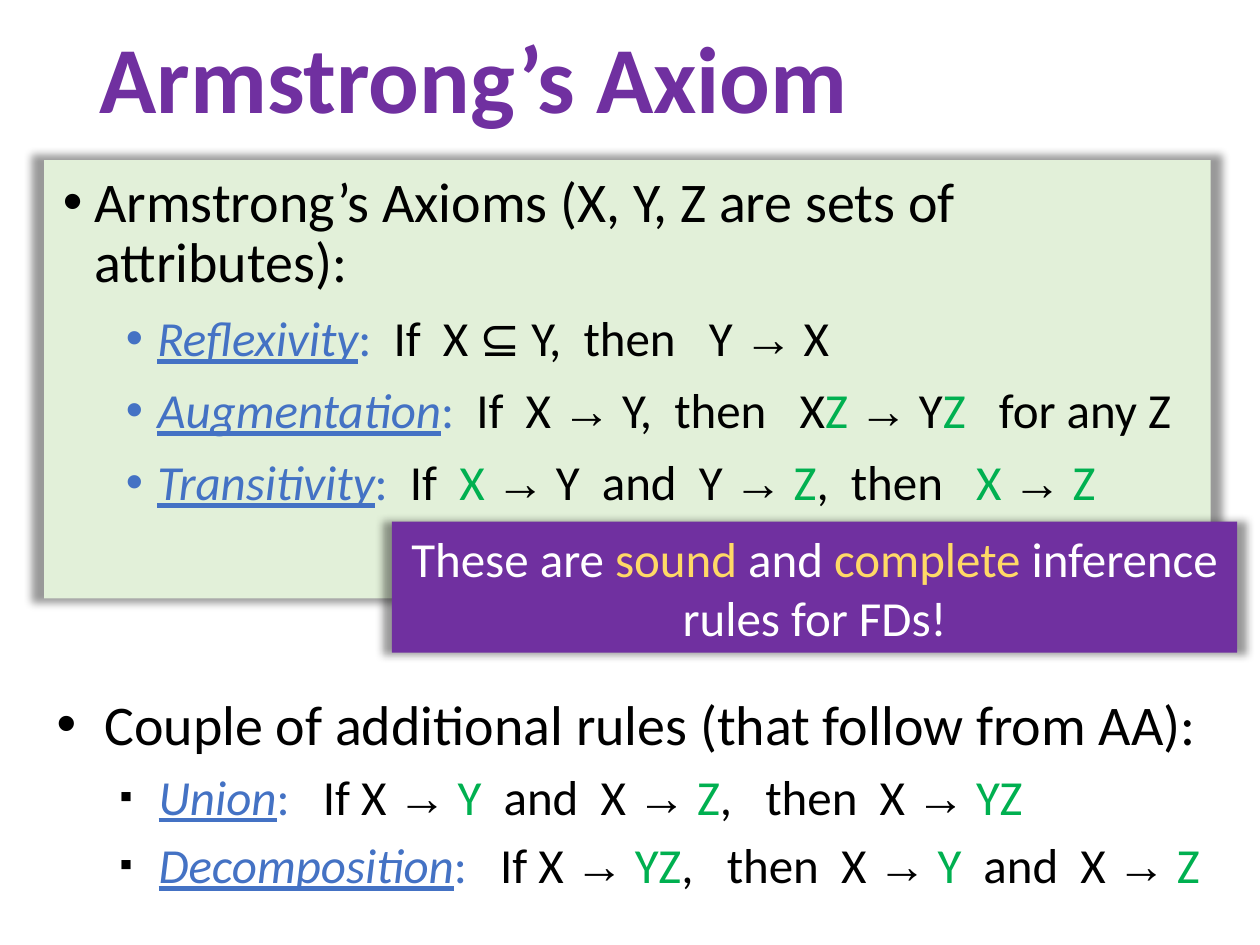
from itertools import groupby

from lxml.etree import SubElement
from pptx import Presentation
from pptx.dml.color import RGBColor
from pptx.enum.shapes import MSO_SHAPE as Shape
from pptx.enum.text import MSO_ANCHOR as Anchor, PP_ALIGN as Align
from pptx.oxml.ns import qn
from pptx.util import Inches, Pt

BLACK = RGBColor(0x00, 0x00, 0x00)
WHITE = RGBColor(0xFF, 0xFF, 0xFF)
PURPLE = RGBColor(0x70, 0x30, 0xA0)
BLUE = RGBColor(0x44, 0x72, 0xC4)
GREEN = RGBColor(0x00, 0xB0, 0x50)
YELLOW = RGBColor(0xFF, 0xD9, 0x66)
PALE_GREEN = RGBColor(0xE2, 0xF0, 0xD9)

FONT, ARROW_FONT = "Calibri", "Times New Roman"
HEAD_SIZE, RULE_SIZE = 32, 28

# Content: text between bars is highlighted
TITLE = "Armstrong’s Axiom"
AXIOMS_HEAD = "Armstrong’s Axioms (X, Y, Z are sets of attributes):"
AXIOMS = [
    ("Reflexivity", ":  ", "If  X ⊆ Y,  then   Y → X"),
    ("Augmentation", ":  ", "If  X → Y,  then   X|Z| → Y|Z|   for any Z"),
    ("Transitivity", ":  ", "If  |X| → Y  and  Y → |Z|,  then   |X| → |Z|"),
]
EXTRA_HEAD = "Couple of additional rules (that follow from AA):"
EXTRA_RULES = [
    ("Union", ":   ", "If X → |Y|  and  X → |Z|,   then  X → |YZ|"),
    ("Decomposition", ":   ", "If X → |YZ|,   then  X → |Y|  and  X → |Z|"),
]
CALLOUT = "These are |sound| and |complete| inference rules for FDs!"

# Paragraph formats: bullet, indents in inches, spacing in points
AXIOM_HEAD_STYLE = dict(char="•", margin=0.25, hang=0.25, line=0.9, before=10, after=6)
AXIOM_STYLE = dict(char="•", margin=0.75, hang=0.25, line=0.9, before=5, after=6)
EXTRA_HEAD_STYLE = dict(char="•", margin=0.38, hang=0.38, line=1.0, before=6.4, after=0)
EXTRA_STYLE = dict(char="▪", margin=0.81, hang=0.31, line=1.0, before=5.6, after=0,
                   color=BLACK, percent=75)


def add_span(para, text, size, color, **format_values):
    span = para.add_run()
    span.text = text
    span.font.color.rgb = color
    values = dict(name=FONT, size=Pt(size)) | format_values
    for name, value in values.items():
        setattr(span.font, name, value)


def add_marked(para, text, size, color, mark_color, arrow_italic=False):
    for index, part in enumerate(text.split("|")):
        part_color = mark_color if index % 2 else color
        for is_arrow, letters in groupby(part, lambda letter: letter == "→"):
            values = dict(name=ARROW_FONT, italic=arrow_italic) if is_arrow else {}
            add_span(para, "".join(letters), size, part_color, **values)


def format_bullet(para, char, margin, hang, line, before, after, color=None, percent=100):
    para.line_spacing = line
    para.space_before, para.space_after = Pt(before), Pt(after)
    props = para._p.get_or_add_pPr()
    props.set("marL", str(Inches(margin)))
    props.set("indent", str(-Inches(hang)))
    if color is not None:
        SubElement(SubElement(props, qn("a:buClr")), qn("a:srgbClr"), val=str(color))
    SubElement(props, qn("a:buSzPct"), val=str(percent * 1000))
    SubElement(props, qn("a:buFont"), typeface="Arial")
    SubElement(props, qn("a:buChar"), char=char)


def add_rules(page, place, head, head_style, rules, rule_style, arrow_italic):
    box = page.shapes.add_textbox(*map(Inches, place))
    frame = box.text_frame
    frame.word_wrap = True
    para = frame.paragraphs[0]
    add_span(para, head, HEAD_SIZE, BLACK)
    format_bullet(para, **head_style)
    for name, colon, rule in rules:
        para = frame.add_paragraph()
        para.level = 1
        add_span(para, name, RULE_SIZE, BLUE, italic=True, underline=True)
        add_span(para, colon, RULE_SIZE, BLUE)
        add_marked(para, rule, RULE_SIZE, BLACK, GREEN, arrow_italic)
        format_bullet(para, **rule_style)


def add_panel(page, place, color):
    panel = page.shapes.add_shape(Shape.RECTANGLE, *map(Inches, place))
    panel.fill.solid()
    panel.fill.fore_color.rgb = color
    panel.line.fill.background()
    # Soft shadow, slightly larger than the panel
    panel.shadow.inherit = False
    effects = panel._element.spPr.find(qn("a:effectLst"))
    shadow = SubElement(effects, qn("a:outerShdw"), blurRad=str(Pt(5)), sx="102000",
                        sy="102000", algn="ctr", rotWithShape="0")
    shade = SubElement(shadow, qn("a:srgbClr"), val=str(BLACK))
    SubElement(shade, qn("a:alpha"), val="40000")
    return panel


def main():
    deck = Presentation()
    deck.slide_width, deck.slide_height = Inches(10), Inches(7.5)
    page = deck.slides.add_slide(deck.slide_layouts[5])

    # Title
    title = page.shapes.title
    place = dict(left=0.69, top=0.13, width=8.62, height=1.06)
    for name, value in place.items():
        setattr(title, name, Inches(value))
    title.text_frame.vertical_anchor = Anchor.MIDDLE
    para = title.text_frame.paragraphs[0]
    para.alignment, para.line_spacing = Align.LEFT, 0.9
    add_span(para, TITLE, 54, PURPLE, bold=True)

    # Axioms on their panel, then the additional rules
    add_panel(page, (0.35, 1.27, 9.26, 3.48), PALE_GREEN)
    add_rules(page, (0.4, 1.33, 9.21, 5.33), AXIOMS_HEAD, AXIOM_HEAD_STYLE,
              AXIOMS, AXIOM_STYLE, arrow_italic=True)
    add_rules(page, (0.35, 5.42, 9.31, 1.92), EXTRA_HEAD, EXTRA_HEAD_STYLE,
              EXTRA_RULES, EXTRA_STYLE, arrow_italic=False)

    # Callout
    callout = add_panel(page, (3.11, 4.14, 6.71, 1.04), PURPLE)
    callout.text_frame.word_wrap = True
    callout.text_frame.vertical_anchor = Anchor.MIDDLE
    para = callout.text_frame.paragraphs[0]
    para.alignment = Align.CENTER
    add_marked(para, CALLOUT, RULE_SIZE, WHITE, YELLOW)

    deck.save("out.pptx")


if __name__ == "__main__":
    main()
